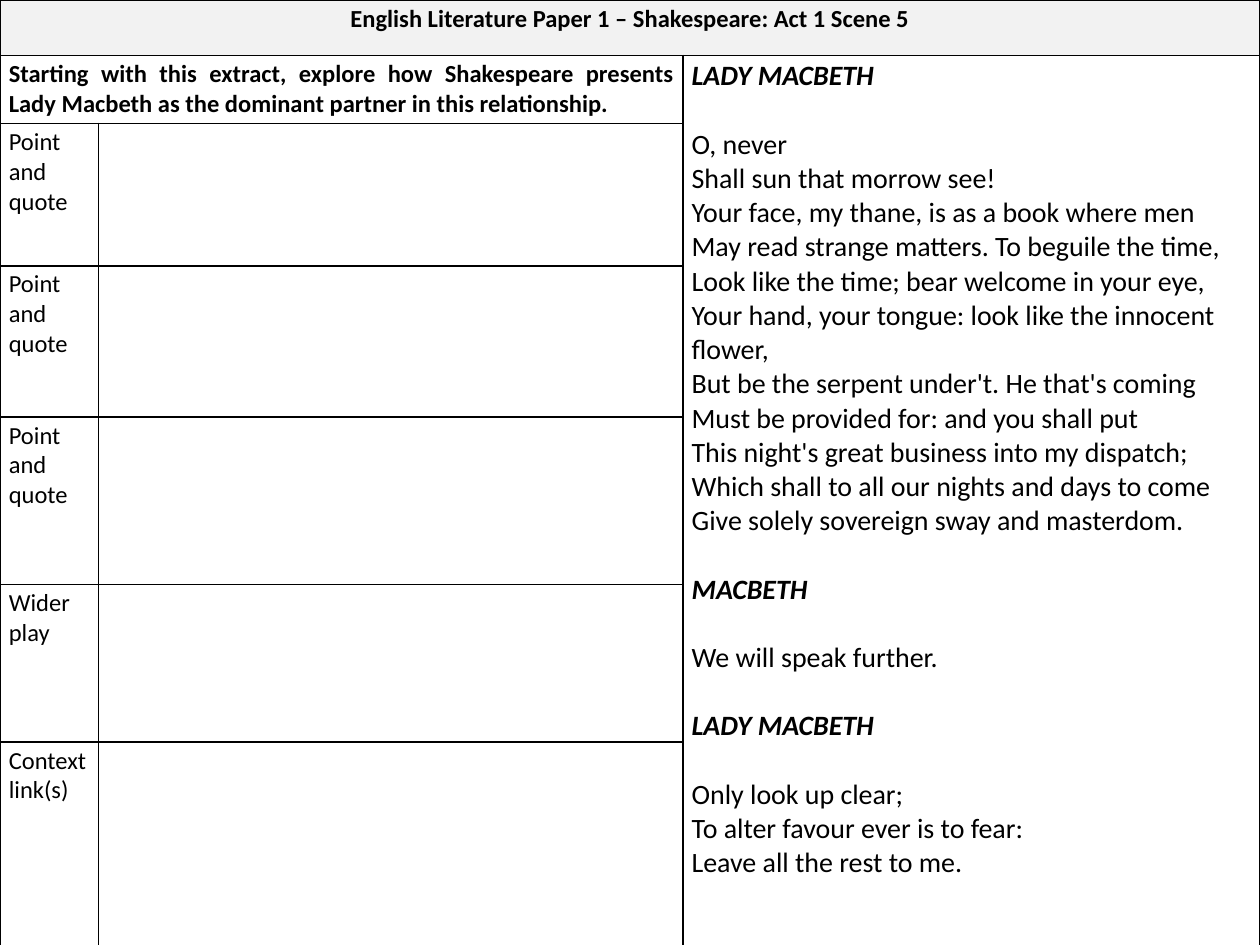
from lxml.etree import SubElement
from pptx import Presentation
from pptx.dml.color import RGBColor
from pptx.enum.text import PP_ALIGN as Align
from pptx.oxml.ns import qn
from pptx.util import Inches, Pt

TITLE = "English Literature Paper 1 – Shakespeare: Act 1 Scene 5"
QUESTION = ("Starting with this extract, explore how Shakespeare presents "
            "Lady Macbeth as the dominant partner in this relationship.")
PROMPTS = ["Point and quote"] * 3 + ["Wider play", "Context link(s)"]
SPEECHES = [
    ("LADY MACBETH", [
        "O, never",
        "Shall sun that morrow see!",
        "Your face, my thane, is as a book where men",
        "May read strange matters. To beguile the time,",
        "Look like the time; bear welcome in your eye,",
        "Your hand, your tongue: look like the innocent flower,",
        "But be the serpent under't. He that's coming",
        "Must be provided for: and you shall put",
        "This night's great business into my dispatch;",
        "Which shall to all our nights and days to come",
        "Give solely sovereign sway and masterdom.",
    ]),
    ("MACBETH", ["We will speak further."]),
    ("LADY MACBETH", [
        "Only look up clear;",
        "To alter favour ever is to fear:",
        "Leave all the rest to me.",
    ]),
]

COLUMNS = [0.78, 4.64, 4.58]
ROWS = [0.44, 0.54, 1.13, 1.2, 1.33, 1.25, 1.66]
INK, TITLE_FILL = "000000", "F2F2F2"
WORKSHEET_SIZE, EXTRACT_SIZE = 14, 16
LINE_GAP = Pt(19.5)  # one line of the extract


def rgb(value):
    return RGBColor.from_string(value)


def style_cell(cell):
    """Give a cell its margins, thin borders on all sides and no fill."""
    cell.margin_left = cell.margin_right = Inches(0.07)
    cell.margin_top = cell.margin_bottom = Inches(0.03)
    properties = cell._tc.get_or_add_tcPr()
    for side in ("lnL", "lnR", "lnT", "lnB"):
        border = SubElement(properties, qn(f"a:{side}"), w=str(Pt(1)))
        ink = SubElement(border, qn("a:solidFill"))
        SubElement(ink, qn("a:srgbClr"), val=INK)
    cell.fill.background()


def write(paragraph, text, size=WORKSHEET_SIZE, bold=False, italic=False,
          align=Align.LEFT):
    paragraph.text = text
    paragraph.alignment = align
    font = paragraph.font
    font.name, font.size = "Calibri", Pt(size)
    font.bold, font.italic = bold, italic
    font.color.rgb = rgb(INK)


def write_extract(frame):
    paragraph = frame.paragraphs[0]
    for number, (speaker, lines) in enumerate(SPEECHES):
        if number:
            paragraph = frame.add_paragraph()
            paragraph.space_before = LINE_GAP
        write(paragraph, speaker, EXTRACT_SIZE, bold=True, italic=True)
        paragraph.space_after = LINE_GAP
        for line in lines:
            write(frame.add_paragraph(), line, EXTRACT_SIZE)


def main():
    deck = Presentation()
    deck.slide_width, deck.slide_height = Inches(10), Inches(7.5)
    slide = deck.slides.add_slide(deck.slide_layouts[6])
    worksheet = slide.shapes.add_table(
        len(ROWS), len(COLUMNS), 0, 0,
        Inches(sum(COLUMNS)), Inches(sum(ROWS))).table
    worksheet.first_row = worksheet.horz_banding = False
    for column, width in zip(worksheet.columns, COLUMNS):
        column.width = Inches(width)
    for row, height in zip(worksheet.rows, ROWS):
        row.height = Inches(height)
    for cell in worksheet.iter_cells():
        style_cell(cell)

    title, question, extract = (
        worksheet.cell(0, 0), worksheet.cell(1, 0), worksheet.cell(1, 2))
    title.merge(worksheet.cell(0, 2))
    question.merge(worksheet.cell(1, 1))
    extract.merge(worksheet.cell(len(ROWS) - 1, 2))

    title.fill.solid()
    title.fill.fore_color.rgb = rgb(TITLE_FILL)
    write(title.text_frame.paragraphs[0], TITLE, bold=True, align=Align.CENTER)
    write(question.text_frame.paragraphs[0], QUESTION, bold=True,
          align=Align.JUSTIFY)
    write_extract(extract.text_frame)
    for row, prompt in enumerate(PROMPTS, start=2):
        write(worksheet.cell(row, 0).text_frame.paragraphs[0], prompt)

    deck.save("out.pptx")


if __name__ == "__main__":
    main()
